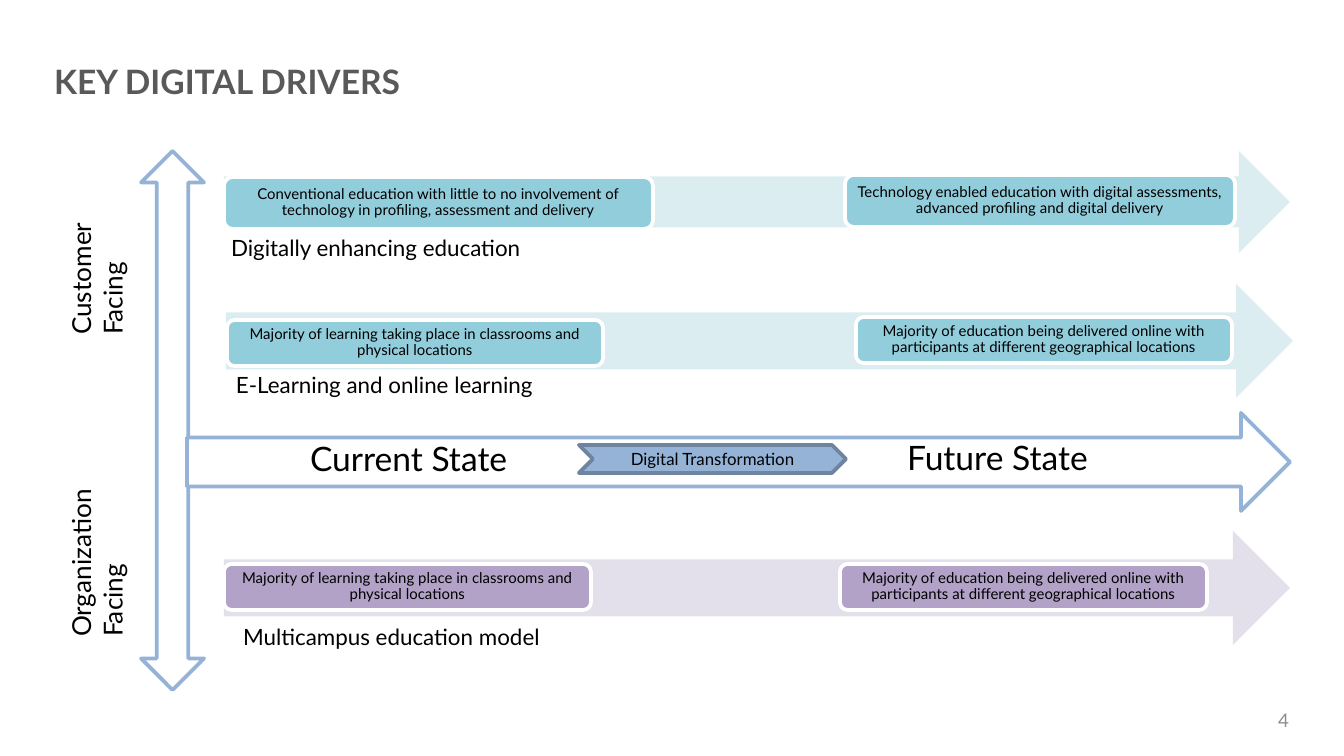
from pptx import Presentation
from pptx.dml.color import RGBColor
from pptx.enum.shapes import MSO_SHAPE
from pptx.enum.text import MSO_ANCHOR, PP_ALIGN
from pptx.util import Emu, Pt

EMU_PER_PX = 914400 / 134.4
FONT = "Lato"
COLORS = {
    "white": "FFFFFF", "black": "000000", "title": "595959", "number": "8C8C8C",
    "axis": "95B3D7", "chevron line": "6E849F",
    "customer arrow": "DCEDF2", "customer box": "92CDDC",
    "organization arrow": "E4E0EB", "organization box": "B2A2C7",
}
INSETS = (13, 7, 13, 7)
BOX_INSETS = (6, 6, 6, 6)

# Areas are left, top, width, height in px.
TITLE = ("KEY DIGITAL DRIVERS", (54, 54, 1107, 54))
AXES = [
    (MSO_SHAPE.UP_DOWN_ARROW, (141, 151, 63, 539)),
    (MSO_SHAPE.RIGHT_ARROW, (187, 413, 1103, 98)),
]
FACINGS = [
    ("Customer Facing", (52, 151, 90, 191)),
    ("Organization Facing", (52, 453, 90, 191)),
]
CLASSROOM = "Majority of learning taking place in classrooms and physical locations"
ONLINE = ("Majority of education being delivered online with participants "
          "at different geographical locations")
DRIVERS = [
    {"facing": "customer", "arrow": (224, 151, 1066, 102), "boxes": [
        ("Conventional education with little to no involvement of technology "
         "in profiling, assessment and delivery", (224, 177, 429, 52)),
        ("Technology enabled education with digital assessments, "
         "advanced profiling and digital delivery", (845, 175, 390, 52))]},
    {"facing": "customer", "arrow": (226, 284, 1067, 114), "boxes": [
        (CLASSROOM, (227, 320, 376, 46)), (ONLINE, (856, 317, 376, 46))]},
    {"facing": "organization", "arrow": (224, 531, 1066, 114), "boxes": [
        (CLASSROOM, (224, 564, 367, 46)), (ONLINE, (840, 564, 367, 46))]},
]
LABELS = [  # text, area, size
    ("Current State", (297, 431, 375, 54), 18),
    ("Future State", (894, 430, 375, 54), 18),
    ("E-Learning and online learning", (223, 364, 767, 67), 12),
    ("Digitally enhancing education", (218, 227, 767, 67), 12),
    ("Multicampus education model", (230, 616, 767, 40), 12),
]
TRANSFORMATION = ("Digital Transformation", (579, 445, 267, 28))
SLIDE_NUMBER = ("4", (1218, 700, 71, 40))


def px(length):
    return Emu(round(length * EMU_PER_PX))


def place(area):
    return [px(length) for length in area]


def color(name):
    return RGBColor.from_string(COLORS[name])


def write(shape, text, size, ink="black", bold=False, align=PP_ALIGN.LEFT,
          anchor=MSO_ANCHOR.TOP, insets=INSETS):
    frame = shape.text_frame
    frame.word_wrap = True
    frame.vertical_anchor = anchor
    (frame.margin_left, frame.margin_top,
     frame.margin_right, frame.margin_bottom) = place(insets)
    paragraph = frame.paragraphs[0]
    paragraph.alignment = align
    run = paragraph.add_run()
    run.text = text
    run.font.name = FONT
    run.font.size = Pt(size)
    run.font.bold = bold
    run.font.color.rgb = color(ink)
    return paragraph


def add_form(shapes, kind, area, fill, line=None):
    shape = shapes.add_shape(kind, *place(area))
    shape.shadow.inherit = False
    shape.fill.solid()
    shape.fill.fore_color.rgb = color(fill)
    if line:
        shape.line.color.rgb = color(line)
        shape.line.width = Pt(2)
    else:
        shape.line.fill.background()
    return shape


def add_label(shapes, text, area, size, **style):
    label = shapes.add_textbox(*place(area))
    write(label, text, size, **style)
    return label


def add_driver(shapes, driver):
    group = shapes.add_group_shape()
    facing = driver["facing"]
    add_form(group.shapes, MSO_SHAPE.RIGHT_ARROW, driver["arrow"], f"{facing} arrow")
    for text, area in driver["boxes"]:
        box = add_form(group.shapes, MSO_SHAPE.ROUNDED_RECTANGLE, area,
                       f"{facing} box", "white")
        paragraph = write(box, text, 8, align=PP_ALIGN.CENTER,
                          anchor=MSO_ANCHOR.MIDDLE, insets=BOX_INSETS)
        paragraph.line_spacing = 0.9


def main():
    presentation = Presentation()
    presentation.slide_width, presentation.slide_height = px(1344), px(756)
    slide = presentation.slides.add_slide(presentation.slide_layouts[5])
    shapes = slide.shapes

    text, area = TITLE
    title = shapes.title
    title.left, title.top, title.width, title.height = place(area)
    write(title, text, 18, ink="title", bold=True,
          anchor=MSO_ANCHOR.MIDDLE, insets=(0, 7, 13, 7))

    for kind, area in AXES:
        add_form(shapes, kind, area, "white", "axis")
    for text, area in FACINGS:
        label = add_label(shapes, text, area, 14)
        label.text_frame._txBody.bodyPr.set("vert", "vert270")
    for driver in DRIVERS:
        add_driver(shapes, driver)
    for text, area, size in LABELS:
        add_label(shapes, text, area, size)

    text, area = SLIDE_NUMBER
    add_label(shapes, text, area, 10, ink="number", align=PP_ALIGN.RIGHT,
              anchor=MSO_ANCHOR.MIDDLE, insets=(13, 7, 0, 7))

    text, area = TRANSFORMATION
    chevron = add_form(shapes, MSO_SHAPE.CHEVRON, area, "axis", "chevron line")
    write(chevron, text, 9, align=PP_ALIGN.CENTER, anchor=MSO_ANCHOR.MIDDLE)

    presentation.save("out.pptx")


if __name__ == "__main__":
    main()
